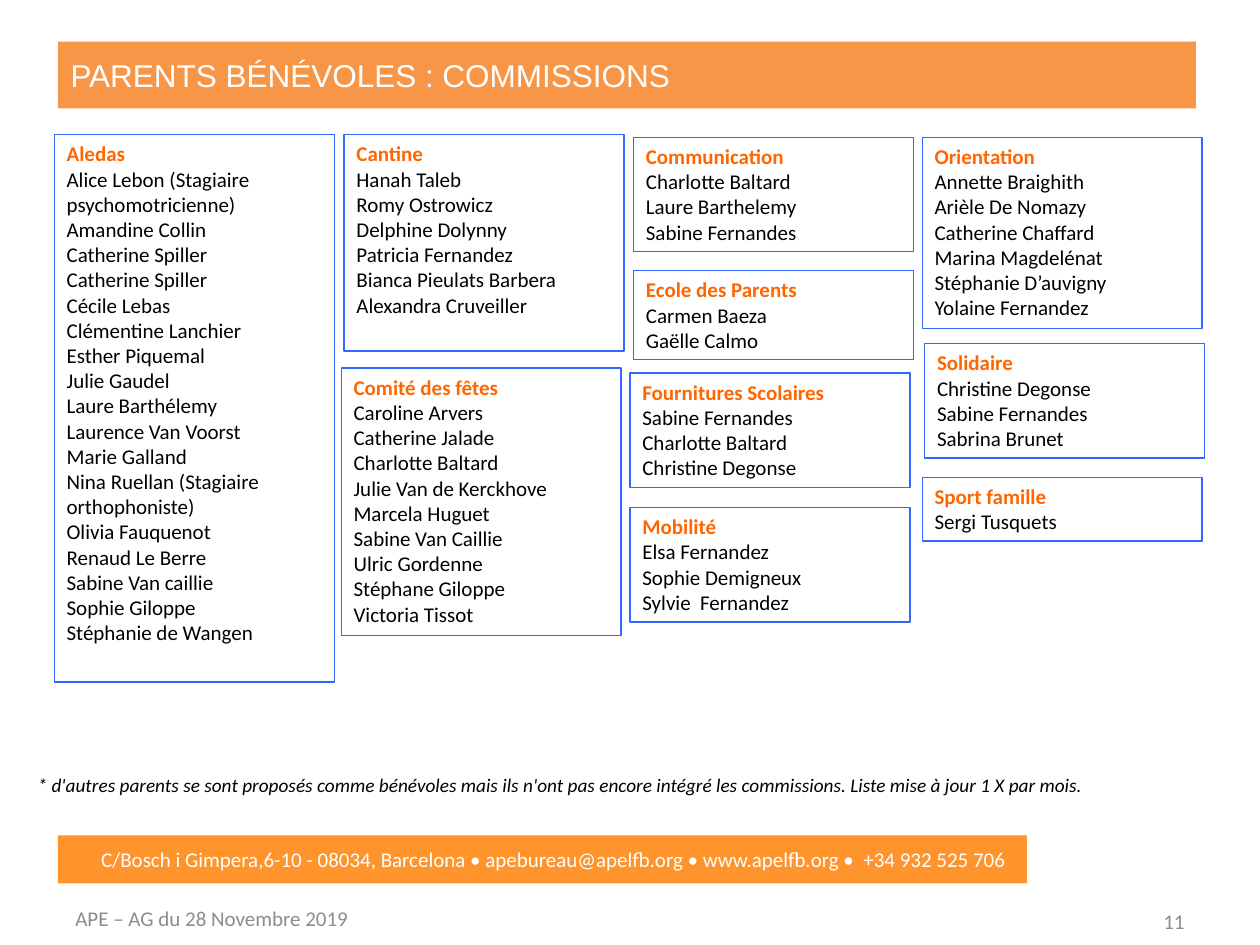
from dataclasses import dataclass

from pptx import Presentation
from pptx.dml.color import RGBColor as Rgb
from pptx.enum import shapes as shp, text as txt
from pptx.util import Pt


@dataclass(frozen=True)
class Theme:
    """Colours, fonts and type sizes of the slide."""
    band: str = "F79646"
    foot: str = "FF942C"
    head: str = "FF6600"
    line: str = "3366FF"
    ink: str = "000000"
    grey: str = "8C8C8C"
    white: str = "FFFFFF"
    face: str = "Calibri"
    display: str = "Arial"
    title: int = 18
    body: int = 12
    note: int = 11
    row: float = 14.55
    pad: float = 7.2


THEME = Theme()

GROUPS = [
    (31, 77, 21, "Aledas", [
        "Alice Lebon (Stagiaire psychomotricienne)", "Amandine Collin",
        "Catherine Spiller", "Catherine Spiller", "Cécile Lebas",
        "Clémentine Lanchier", "Esther Piquemal", "Julie Gaudel",
        "Laure Barthélemy", "Laurence Van Voorst", "Marie Galland",
        "Nina Ruellan (Stagiaire orthophoniste)", "Olivia Fauquenot",
        "Renaud Le Berre", "Sabine Van caillie", "Sophie Giloppe",
        "Stéphanie de Wangen"]),
    (196.6, 77, 8, "Cantine", [
        "Hanah Taleb", "Romy Ostrowicz", "Delphine Dolynny",
        "Patricia Fernandez", "Bianca Pieulats Barbera",
        "Alexandra Cruveiller"]),
    (195, 210.3, 10, "Comité des fêtes", [
        "Caroline Arvers", "Catherine Jalade", "Charlotte Baltard",
        "Julie Van de Kerckhove", "Marcela Huguet", "Sabine Van Caillie",
        "Ulric Gordenne", "Stéphane Giloppe", "Victoria Tissot"]),
    (362, 78.5, 4, "Communication", [
        "Charlotte Baltard", "Laure Barthelemy", "Sabine Fernandes"]),
    (362, 154.7, 3, "Ecole des Parents", ["Carmen Baeza", "Gaëlle Calmo"]),
    (360, 213.2, 4, "Fournitures Scolaires", [
        "Sabine Fernandes", "Charlotte Baltard", "Christine Degonse"]),
    (360, 290, 4, "Mobilité", [
        "Elsa Fernandez", "Sophie Demigneux", "Sylvie  Fernandez"]),
    (527, 78.5, 7, "Orientation", [
        "Annette Braighith", "Arièle De Nomazy", "Catherine Chaffard",
        "Marina Magdelénat", "Stéphanie D’auvigny", "Yolaine Fernandez"]),
    (528.4, 196.4, 4, "Solidaire", [
        "Christine Degonse", "Sabine Fernandes", "Sabrina Brunet"]),
    (527, 272.8, 2, "Sport famille", ["Sergi Tusquets"]),
]


def style(para, color, size=THEME.body, face=THEME.face, bold=False, ital=False):
    """Format the runs of one paragraph."""
    for run in para.runs:
        font = run.font
        font.name, font.size = face, Pt(size)
        font.bold, font.italic = bold, ital
        font.color.rgb = Rgb.from_string(color)


def rect(slide, box):
    """Add a plain rectangle without a shadow."""
    shape = slide.shapes.add_shape(shp.MSO_SHAPE.RECTANGLE, *map(Pt, box))
    shape.shadow.inherit = False
    return shape


def label(slide, box, words, color, mid=False, right=False, **look):
    """Add one line of text in a box."""
    frame = slide.shapes.add_textbox(*map(Pt, box)).text_frame
    frame.word_wrap = True
    frame.text = words
    if mid:
        frame.vertical_anchor = txt.MSO_ANCHOR.MIDDLE
    para = frame.paragraphs[0]
    para.alignment = txt.PP_ALIGN.RIGHT if right else txt.PP_ALIGN.LEFT
    style(para, color, **look)


def banner(slide, box, words):
    """Turn the title placeholder into a coloured band."""
    title = slide.shapes.title
    title.left, title.top, title.width, title.height = map(Pt, box)
    title.fill.solid()
    title.fill.fore_color.rgb = Rgb.from_string(THEME.band)
    frame = title.text_frame
    frame.text = words
    frame.auto_size = txt.MSO_AUTO_SIZE.NONE
    frame.vertical_anchor = txt.MSO_ANCHOR.MIDDLE
    para = frame.paragraphs[0]
    para.alignment = txt.PP_ALIGN.LEFT
    style(para, THEME.white, THEME.title, THEME.display)


def group(slide, box, name, people):
    """Draw one committee card with its name and members."""
    card = rect(slide, box)
    card.fill.background()
    card.line.color.rgb = Rgb.from_string(THEME.line)
    card.line.width = Pt(0.75)
    frame = card.text_frame
    frame.word_wrap = True
    frame.vertical_anchor = txt.MSO_ANCHOR.TOP
    frame.text = "\n".join([name, *people])
    for i, para in enumerate(frame.paragraphs):
        para.alignment = txt.PP_ALIGN.LEFT
        style(para, THEME.ink if i else THEME.head, bold=i == 0)


def contact(slide, box, words):
    """Draw the contact bar with its text."""
    bar = rect(slide, box)
    bar.fill.solid()
    bar.fill.fore_color.rgb = Rgb.from_string(THEME.foot)
    bar.line.fill.background()
    left, top, width, height = box
    label(slide, (left + 17.6, top + 2.9, width - 15, height - 5.4), words, THEME.white)


def footer(slide, box, words, page):
    """Place the meeting name and page number along the foot."""
    left, top, width, height = box
    label(slide, (left, top, 228, height), words, THEME.grey, mid=True)
    label(slide, (left + width - 168, top + 1.4, 168, height), page, THEME.grey,
          mid=True, right=True)


def main():
    """Build and save the slide."""
    deck = Presentation()
    deck.slide_width, deck.slide_height = Pt(720), Pt(540)
    slide = deck.slides.add_slide(deck.slide_layouts[5])
    contact(slide, (33.1, 477.4, 553.7, 27.4),
            "C/Bosch i Gimpera,6-10 - 08034, Barcelona • apebureau@apelfb.org"
            " • www.apelfb.org •  +34 932 525 706")
    for left, top, rows, name, people in GROUPS:
        high = THEME.pad + rows * THEME.row
        group(slide, (left, top, 160, high), name, people)
    label(slide, (14.4, 438.5, 687.6, 20.9),
          "* d'autres parents se sont proposés comme bénévoles mais ils n'ont pas "
          "encore intégré les commissions. Liste mise à jour 1 X par mois.",
          THEME.ink, size=THEME.note, ital=True)
    banner(slide, (33.1, 23.8, 650.2, 38.2), "PARENTS BÉNÉVOLES : COMMISSIONS")
    footer(slide, (36, 510.5, 648, 28.8), "APE – AG du 28 Novembre 2019", "11")
    deck.save("out.pptx")


if __name__ == "__main__":
    main()
